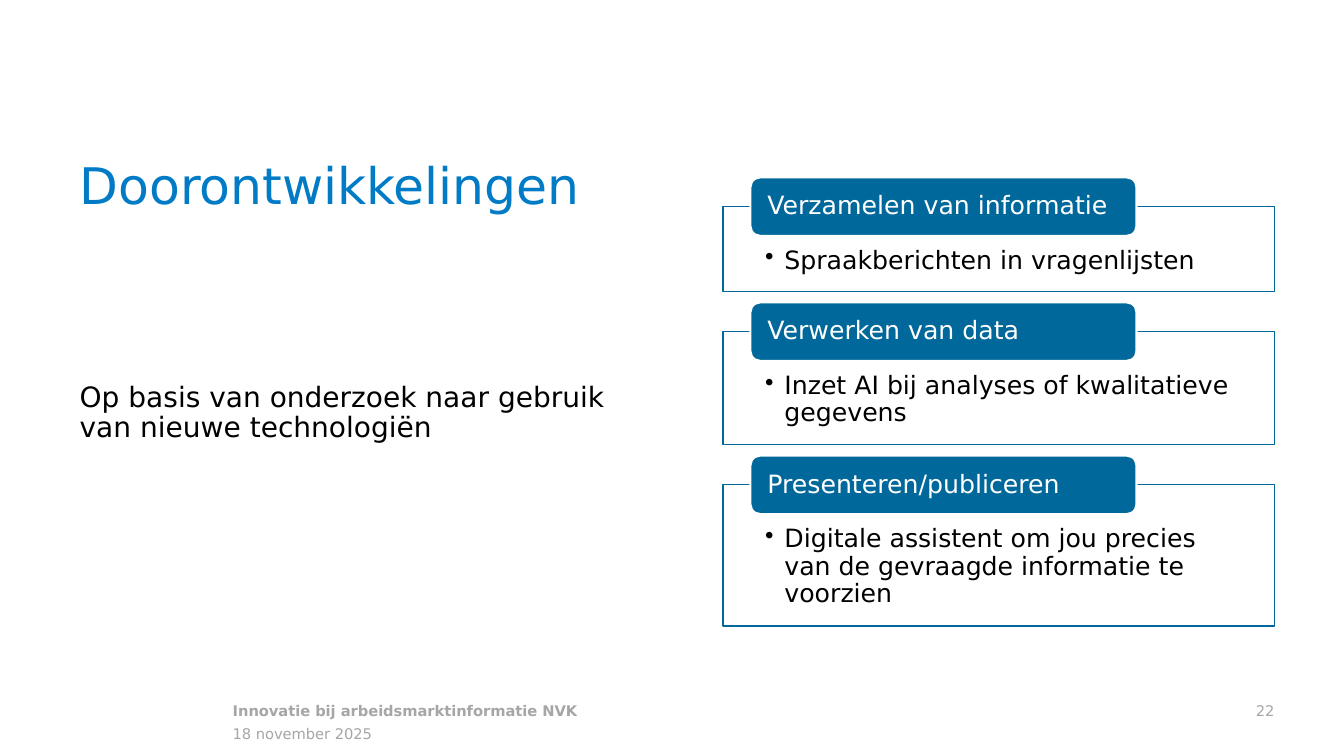
from lxml import etree
from pptx import Presentation, util as u
from pptx.dml.color import RGBColor
from pptx.enum import shapes, text
from pptx.oxml.ns import qn

W, H = 13.33, 7.5
FONT = "DejaVu Sans"
BLUE, TITLE_BLUE, GREY, BLACK, WHITE = "01689B", "017BC6", "A6A6A6", "000000", "FFFFFF"
TITLE = "Doorontwikkelingen"
INTRO = "Op basis van onderzoek naar gebruik van nieuwe technologiën"
CARDS = [
    ("Verzamelen van informatie", "Spraakberichten in vragenlijsten", 1),
    ("Verwerken van data", "Inzet AI bij analyses of kwalitatieve gegevens", 2),
    ("Presenteren/publiceren", "Digitale assistent om jou precies van de gevraagde informatie te voorzien", 3),
]
COL_W = 5.47
LEFT, RIGHT = 0.69, W - 0.69 - COL_W
FOOT_Y, FOOT_H, FOOT_X, FOOT_W = 6.84, 0.35, 2.21, 3.96
CARD_TOP, CARD_GAP, CARD_PAD, LINE_H = 2.05, 0.4, 0.56, 0.28
LABEL_X, LABEL_W, LABEL_H = RIGHT + COL_W / 20, COL_W * 0.7, 0.58
TOP, MIDDLE, BOTTOM = text.MSO_ANCHOR.TOP, text.MSO_ANCHOR.MIDDLE, text.MSO_ANCHOR.BOTTOM
FOOTER = [
    ("18 november 2025", FOOT_X, FOOT_Y + FOOT_H, FOOT_W, 0.29, TOP, (0.1, 0, 0.1, 0.05), False, text.PP_ALIGN.LEFT),
    ("Innovatie bij arbeidsmarktinformatie NVK", FOOT_X, FOOT_Y, FOOT_W, FOOT_H, BOTTOM,
     (0.1, 0.05, 0.1, 0.05), True, text.PP_ALIGN.LEFT),
    ("22", RIGHT, FOOT_Y, COL_W, FOOT_H, BOTTOM, (0.1, 0.05, 0, 0.05), False, text.PP_ALIGN.RIGHT),
]


def rgb(color):
    return RGBColor.from_string(color)


def box(*lengths):
    return [u.Inches(n) for n in lengths]


def place(sp, *lengths):
    sp.left, sp.top, sp.width, sp.height = box(*lengths)


def write(sp, words, size, color, anchor=TOP, insets=(0.1, 0.05, 0.1, 0.05),
          spacing=0.9, bold=False, align=text.PP_ALIGN.LEFT, bullet=None):
    tf = sp.text_frame
    tf.text = words
    tf.word_wrap = True
    tf.auto_size = text.MSO_AUTO_SIZE.NONE
    tf.vertical_anchor = anchor
    tf.margin_left, tf.margin_top, tf.margin_right, tf.margin_bottom = box(*insets)
    p = tf.paragraphs[0]
    pPr = p._p.get_or_add_pPr()
    indent = u.Inches(0.19) if bullet else 0
    pPr.set("marL", str(indent))
    pPr.set("indent", str(-indent))
    if bullet:
        etree.SubElement(pPr, qn("a:buChar")).set("char", bullet)
    else:
        etree.SubElement(pPr, qn("a:buNone"))
    p.alignment = align
    p.line_spacing = spacing
    p.space_before = u.Pt(0)
    font = p.runs[0].font
    font.name, font.size, font.bold = FONT, u.Pt(size), bold
    font.color.rgb = rgb(color)


def panel(s, kind, lengths, fill, line, width):
    sp = s.shapes.add_shape(kind, *box(*lengths))
    sp.shadow.inherit = False
    sp.fill.solid()
    sp.fill.fore_color.rgb = rgb(fill)
    sp.line.color.rgb = rgb(line)
    sp.line.width = u.Pt(width)
    return sp


def main():
    prs = Presentation()
    prs.slide_width, prs.slide_height = box(W, H)
    s = prs.slides.add_slide(prs.slide_layouts[1])
    title, body = s.shapes.title, s.placeholders[1]
    place(title, LEFT, 1.15, COL_W, 1.04)
    write(title, TITLE, 36, TITLE_BLUE, BOTTOM)
    place(body, LEFT, H / 2, COL_W, 2.91)
    write(body, INTRO, 20, BLACK)

    for words, x, y, w, h, anchor, insets, bold, align in FOOTER:
        tb = s.shapes.add_textbox(*box(x, y, w, h))
        write(tb, words, 10.5, GREY, anchor, insets, 1.0, bold, align)

    y = CARD_TOP
    for heading, detail, lines in CARDS:
        h = CARD_PAD + LINE_H * lines
        card = panel(s, shapes.MSO_SHAPE.RECTANGLE, (RIGHT, y, COL_W, h), WHITE, BLUE, 1)
        color = card.fill._xPr.find(qn("a:solidFill"))[0]
        etree.SubElement(color, qn("a:alpha")).set("val", "90000")
        write(card, detail, 18, BLACK, insets=(0.42, 0.41, 0.42, 0.14), bullet="•")
        label = panel(s, shapes.MSO_SHAPE.ROUNDED_RECTANGLE,
                      (LABEL_X, y - LABEL_H / 2, LABEL_W, LABEL_H), BLUE, WHITE, 1.5)
        write(label, heading, 18, WHITE, MIDDLE, (0.14, 0, 0.14, 0))
        y += h + CARD_GAP

    prs.save("out.pptx")


if __name__ == "__main__":
    main()
